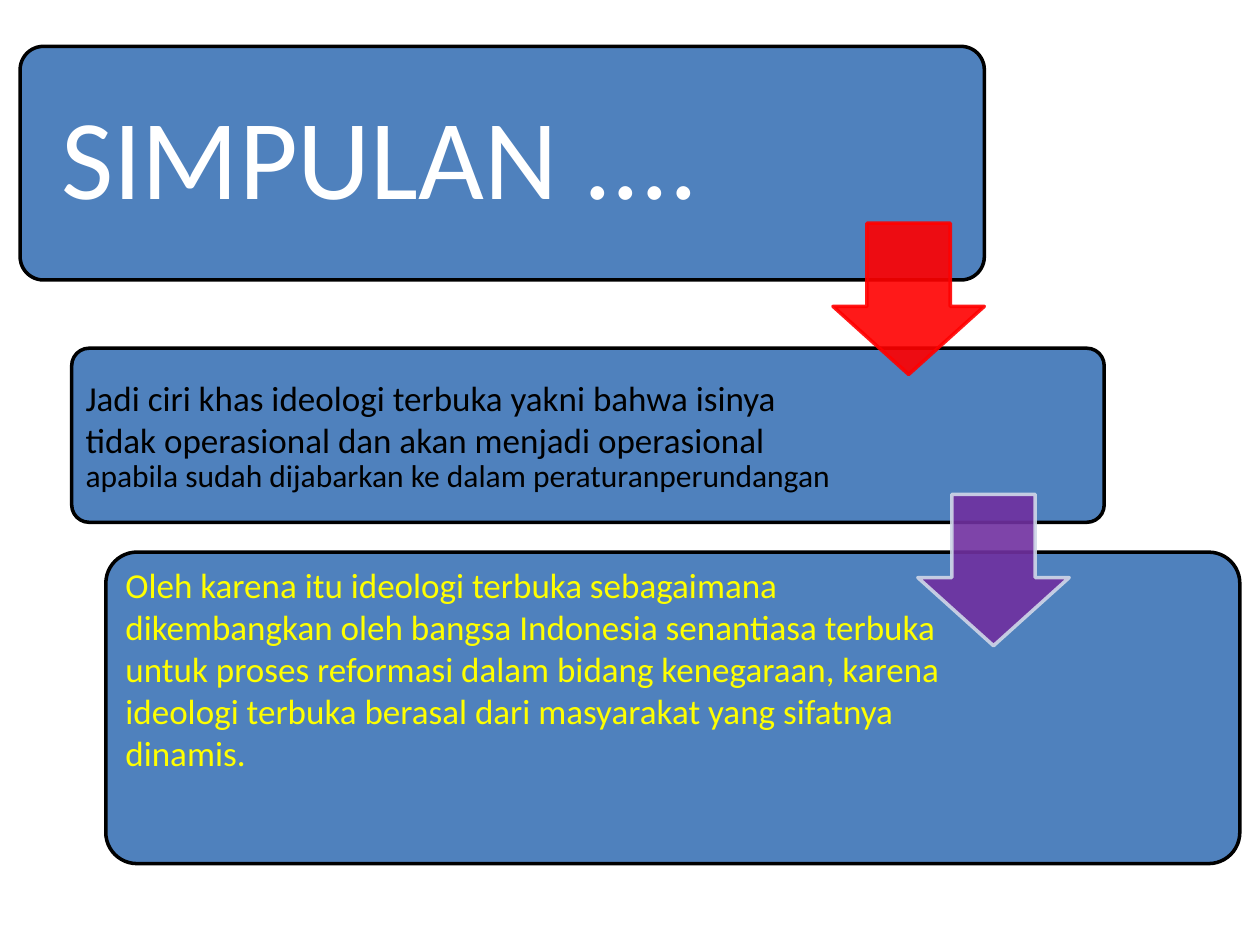
from dataclasses import dataclass

from lxml.etree import SubElement
from pptx import Presentation
from pptx.dml.color import RGBColor as Color
from pptx.enum.shapes import MSO_SHAPE as Shape
from pptx.enum.text import MSO_ANCHOR as Anchor, MSO_AUTO_SIZE as AutoSize, PP_ALIGN as Align
from pptx.oxml.ns import qn
from pptx.util import Pt


@dataclass(frozen=True)
class Theme:
    font: str = "Calibri"
    card: str = "4F81BD"
    outline: str = "000000"
    title: str = "FFFFFF"
    ink: str = "000000"
    accent: str = "FFFF00"
    first_arrow: str = "FF0000"
    second_arrow: str = "7030A0"
    pale_line: str = "D0D8E8"
    title_size: int = 65
    body_size: int = 20
    small_size: int = 18
    line_width: int = 2
    arrow_opacity: int = 90
    tight: float = 0.9
    corner: float = 0.1


class SlideBuilder:
    def __init__(self, deck, theme):
        self.theme = theme
        self.page = deck.slides.add_slide(deck.slide_layouts[5])

    def shape(self, kind, frame, fill, line):
        box = self.page.shapes.add_shape(kind, *map(Pt, frame))
        box.shadow.inherit = False
        box.fill.solid()
        box.fill.fore_color.rgb = Color.from_string(fill)
        box.line.color.rgb = Color.from_string(line)
        box.line.width = Pt(self.theme.line_width)
        return box

    def card(self, left, top, width, height, text_width):
        theme = self.theme
        box = self.shape(Shape.ROUNDED_RECTANGLE, (left, top, width, height), theme.card, theme.outline)
        box.adjustments[0] = theme.corner
        pad = height * theme.corner * 0.29
        return box, (left + pad, top + pad, text_width, height - 2 * pad)

    def arrow(self, left, top, side, fill, line):
        box = self.shape(Shape.DOWN_ARROW, (left, top, side, side), fill, line)
        box.adjustments[0] = 0.55
        box.adjustments[1] = 0.45
        for color in box.element.spPr.iter(qn("a:srgbClr")):
            SubElement(color, qn("a:alpha"), val=str(self.theme.arrow_opacity * 1000))

    def set_text(self, box, frame, lines, color, inset, anchor=Anchor.MIDDLE, top_inset=None):
        box.left, box.top, box.width, box.height = map(Pt, frame)
        text = box.text_frame
        text.word_wrap = True
        text.auto_size = AutoSize.NONE
        text.vertical_anchor = anchor
        text.margin_left = text.margin_right = text.margin_bottom = Pt(inset)
        text.margin_top = Pt(inset if top_inset is None else top_inset)
        text.text = "\n".join(words for words, size, spacing in lines)
        for para, (words, size, spacing) in zip(text.paragraphs, lines):
            para.alignment = Align.LEFT
            para.line_spacing = spacing
            for span in para.runs:
                span.font.name = self.theme.font
                span.font.size = Pt(size)
                span.font.color.rgb = Color.from_string(color)

    def title(self, card, frame, words):
        theme = self.theme
        box = self.page.shapes.title
        card.element.addnext(box.element)
        self.set_text(box, frame, [(words, theme.title_size, theme.tight)], theme.title, 19.5)

    def body(self, frame, lines, color, inset, **layout):
        box = self.page.shapes.add_textbox(*map(Pt, frame))
        self.set_text(box, frame, lines, color, inset, **layout)


def main():
    deck = Presentation()
    deck.slide_width, deck.slide_height = Pt(720), Pt(540)
    theme = Theme()
    slide = SlideBuilder(deck, theme)

    card, frame = slide.card(11.5, 26.5, 551, 133.5, 407)
    slide.title(card, frame, "SIMPULAN ....")

    card, frame = slide.card(41, 199, 590, 99.5, 439)
    slide.body(frame, [
        ("Jadi ciri khas ideologi terbuka yakni bahwa isinya tidak operasional "
         "dan akan menjadi operasional", theme.body_size, 1.0),
        ("apabila sudah dijabarkan ke dalam peraturanperundangan", theme.small_size, theme.tight),
    ], theme.ink, 5)

    card, frame = slide.card(60.5, 315.5, 648, 178, 478)
    slide.body(frame, [
        ("Oleh karena itu ideologi terbuka sebagaimana dikembangkan oleh bangsa Indonesia "
         "senantiasa terbuka untuk proses reformasi dalam bidang kenegaraan, karena ideologi "
         "terbuka berasal dari masyarakat yang sifatnya dinamis.", theme.body_size, 1.0),
    ], theme.accent, 6, anchor=Anchor.TOP, top_inset=1.5)

    slide.arrow(476, 127.5, 86.5, theme.first_arrow, theme.first_arrow)
    slide.arrow(524.5, 282.5, 86.5, theme.second_arrow, theme.pale_line)
    deck.save("out.pptx")


if __name__ == "__main__":
    main()
